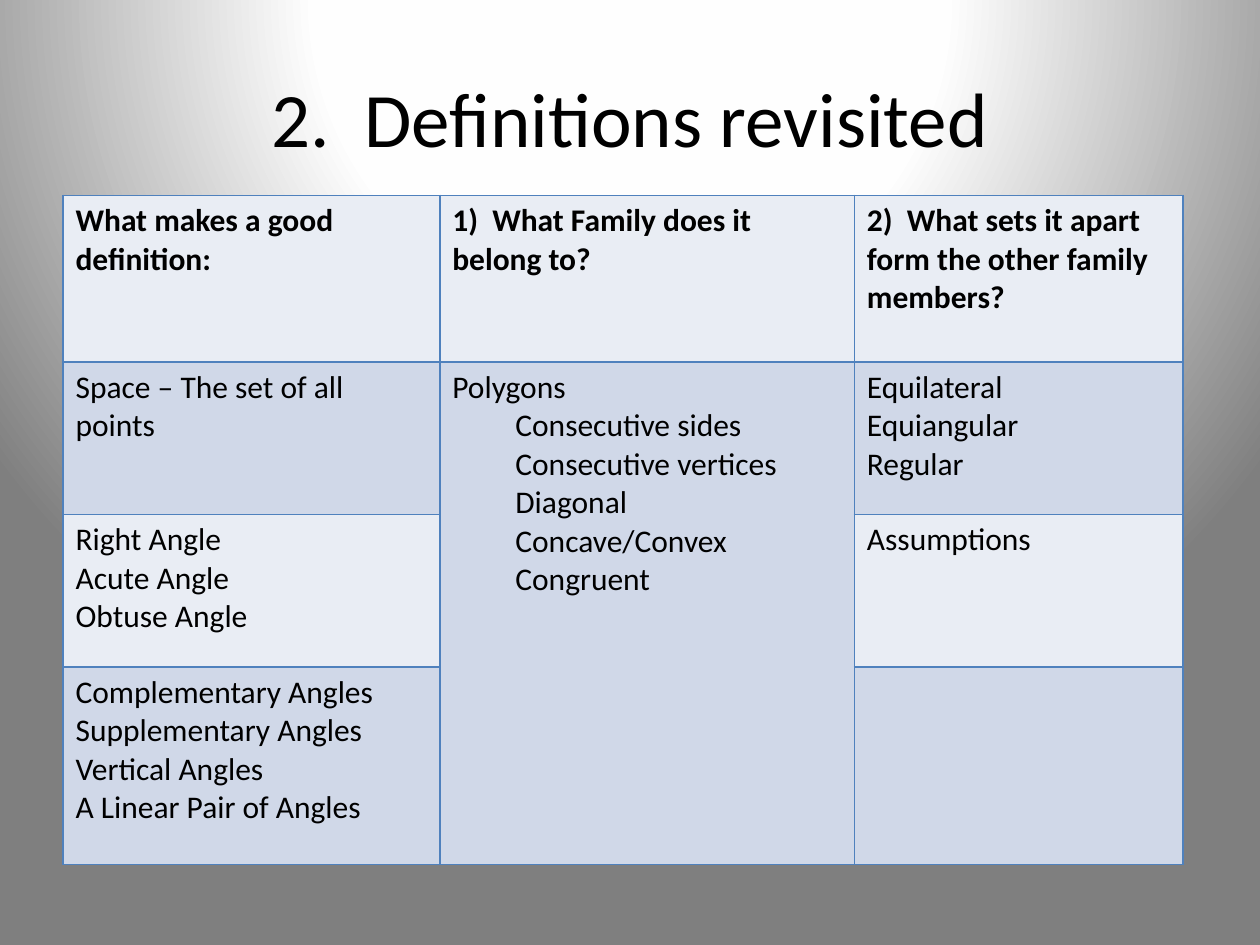
"""Builds a slide with a three-column table of geometry definitions."""
from dataclasses import dataclass

from pptx import Presentation
from pptx.dml.color import RGBColor
from pptx.enum.text import MSO_ANCHOR, PP_ALIGN
from pptx.oxml import parse_xml
from pptx.oxml.ns import nsdecls
from pptx.util import Pt

CENTER = PP_ALIGN.CENTER
MIDDLE = MSO_ANCHOR.MIDDLE


@dataclass(frozen=True)
class Theme:
    font: str = "Calibri"
    title_size: int = 44
    body_size: int = 18
    text: str = "000000"
    border: str = "4F81BD"
    bands: tuple = ("E9EDF4", "D0D8E8")
    backdrop: tuple = ((0, "FFFFFF"), (40, "FEFEFE"), (100, "7F7F7F"))


THEME = Theme()
COL_WIDTHS = (215.3, 236.9, 187.9)
ROW_HEIGHTS = (95.4, 87.1, 87.1, 113)
INDENT = 36
POLYGON_TERMS = ("Polygons", "\tConsecutive sides", "\tConsecutive vertices",
                 "\tDiagonal", "\tConcave/Convex", "\tCongruent")
ROWS = (
    (("What makes a good definition:",),
     ("1)  What Family does it belong to?",),
     ("2)  What sets it apart form the other family members?",)),
    (("Space – The set of all points",),
     POLYGON_TERMS,
     ("Equilateral", "Equiangular", "Regular")),
    (("Right Angle", "Acute Angle", "Obtuse Angle"),
     (),
     ("Assumptions",)),
    (("Complementary Angles", "Supplementary Angles", "Vertical Angles",
      "A Linear Pair of Angles"),
     (),
     ()),
)


def set_backdrop(s):
    s.background.fill.gradient()
    grad = s.element.find(".//{*}gradFill")
    stops = "".join(
        f'<a:gs pos="{pos * 1000}"><a:srgbClr val="{color}"/></a:gs>'
        for pos, color in THEME.backdrop)
    grad.getparent().replace(grad, parse_xml(
        f'<a:gradFill {nsdecls("a")} rotWithShape="1"><a:gsLst>{stops}</a:gsLst>'
        '<a:path path="circle"><a:fillToRect l="50000" t="-80000" r="50000" b="180000"/>'
        '</a:path></a:gradFill>'))


def style_font(p, size, bold=False):
    p.font.name = THEME.font
    p.font.size = Pt(size)
    p.font.bold = bold
    p.font.color.rgb = RGBColor.from_string(THEME.text)


def add_title(s, text):
    sp = s.shapes.add_textbox(Pt(36), Pt(21.6), Pt(648), Pt(90))
    tf = sp.text_frame
    tf.word_wrap = True
    tf.vertical_anchor = MIDDLE
    p = tf.paragraphs[0]
    p.text = text
    p.alignment = CENTER
    style_font(p, THEME.title_size)


def set_borders(cell):
    props = cell._tc.get_or_add_tcPr()
    for i, side in enumerate(("lnL", "lnR", "lnT", "lnB")):
        props.insert(i, parse_xml(
            f'<a:{side} {nsdecls("a")} w="{Pt(1)}"><a:solidFill>'
            f'<a:srgbClr val="{THEME.border}"/></a:solidFill></a:{side}>'))


def fill_cell(cell, lines, color, bold):
    cell.fill.solid()
    cell.fill.fore_color.rgb = RGBColor.from_string(color)
    set_borders(cell)
    tf = cell.text_frame
    for i, line in enumerate(lines):
        p = tf.add_paragraph() if i else tf.paragraphs[0]
        p.text = line.lstrip("\t")
        style_font(p, THEME.body_size, bold)
        if line.startswith("\t"):
            p._p.get_or_add_pPr().set("marL", str(Pt(INDENT)))


def add_definition_table(s):
    frame = s.shapes.add_table(len(ROW_HEIGHTS), len(COL_WIDTHS), Pt(36), Pt(111.6),
                               Pt(sum(COL_WIDTHS)), Pt(sum(ROW_HEIGHTS)))
    table = frame.table
    table.first_row = table.horz_banding = False
    for col, width in zip(table.columns, COL_WIDTHS):
        col.width = Pt(width)
    for row, height in zip(table.rows, ROW_HEIGHTS):
        row.height = Pt(height)
    for r, row in enumerate(ROWS):
        for c, lines in enumerate(row):
            fill_cell(table.cell(r, c), lines, THEME.bands[r % 2], r == 0)
    table.cell(1, 1).merge(table.cell(3, 1))


def main():
    prs = Presentation()
    prs.slide_width, prs.slide_height = Pt(720), Pt(540)
    s = prs.slides.add_slide(prs.slide_layouts[6])
    set_backdrop(s)
    add_title(s, "2.  Definitions revisited")
    add_definition_table(s)
    prs.save("out.pptx")


if __name__ == "__main__":
    main()
